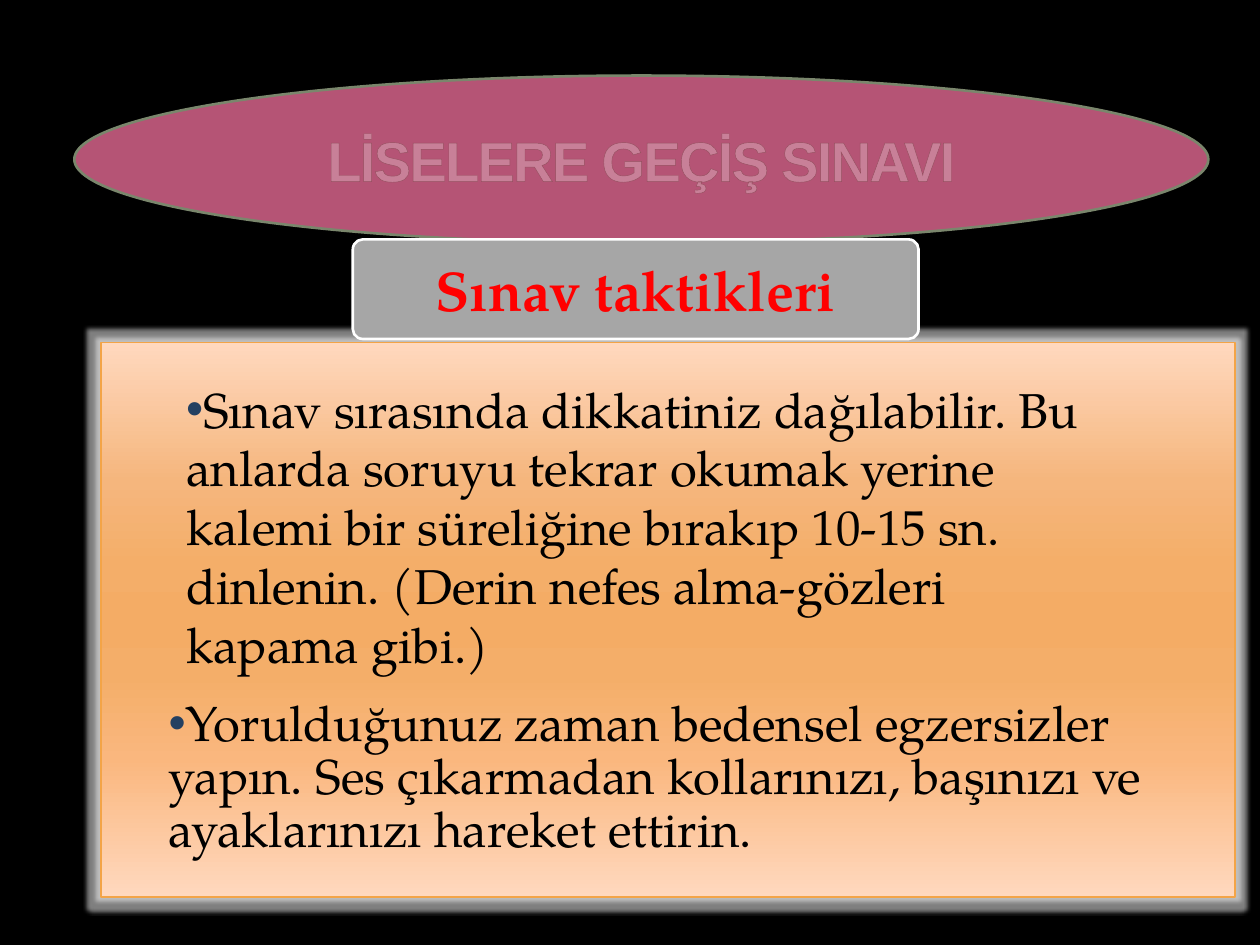
from lxml import etree
from pptx import Presentation
from pptx.dml.color import RGBColor
from pptx.enum.shapes import MSO_SHAPE
from pptx.enum.text import MSO_ANCHOR, PP_ALIGN
from pptx.oxml import parse_xml
from pptx.oxml.ns import nsdecls, qn
from pptx.util import Inches, Pt

OVAL, RECTANGLE, ROUNDED = MSO_SHAPE.OVAL, MSO_SHAPE.RECTANGLE, MSO_SHAPE.ROUNDED_RECTANGLE
MIDDLE, CENTER = MSO_ANCHOR.MIDDLE, PP_ALIGN.CENTER
SERIF = "TeX Gyre Pagella"

TITLE = "LİSELERE GEÇİŞ SINAVI"
SUBTITLE = "Sınav taktikleri"
TIPS = [
    ("Sınav sırasında dikkatiniz dağılabilir. Bu anlarda soruyu tekrar okumak yerine "
     "kalemi bir süreliğine bırakıp 10-15 sn. dinlenin. (Derin nefes alma-gözleri kapama gibi.)",
     (1.38, 2.96, 7.56, 2.93), 1.0),
    ("Yorulduğunuz zaman bedensel egzersizler yapın. Ses çıkarmadan kollarınızı, "
     "başınızı ve ayaklarınızı hareket ettirin.",
     (1.24, 5.5, 8.11, 1.4), 0.9),
]
PANEL_STOPS = [(0, "FFD8BE"), (25, "F5B67D"), (40, "F4AE69"), (50, "F4AC65"),
               (60, "F4AE69"), (75, "FAB77E"), (100, "FFD8BE")]


def color(value):
    return RGBColor.from_string(value)


def add_block(slide, kind, box, line, width, fill=None):
    shape = slide.shapes.add_shape(kind, *map(Inches, box))
    shape.shadow.inherit = False
    if fill:
        shape.fill.solid()
        shape.fill.fore_color.rgb = color(fill)
    shape.line.color.rgb = color(line)
    shape.line.width = Pt(width)
    return shape


def style(paragraph, text, size, font, text_color, bold=False):
    paragraph.text = text
    paragraph.font.size = Pt(size)
    paragraph.font.name = font
    paragraph.font.bold = bold
    paragraph.font.color.rgb = color(text_color)


def add_heading(shape, text, font, text_color):
    shape.text_frame.word_wrap = True
    shape.text_frame.vertical_anchor = MIDDLE
    paragraph = shape.text_frame.paragraphs[0]
    paragraph.alignment = CENTER
    style(paragraph, text, 32, font, text_color, True)
    return paragraph


def outline_text(paragraph):
    run = paragraph.runs[0]
    run.font.color.rgb = color("FFFFFF")
    properties = run.font._element
    properties.set("spc", "-100")
    properties.insert(0, parse_xml(
        f'<a:ln {nsdecls("a")} w="3175"><a:solidFill><a:srgbClr val="3C4422">'
        '<a:alpha val="25000"/></a:srgbClr></a:solidFill><a:prstDash val="solid"/></a:ln>'))


def add_gradient_and_glow(shape, stops):
    properties = shape._element.spPr
    stop_xml = "".join(f'<a:gs pos="{position * 1000}"><a:srgbClr val="{value}"/></a:gs>'
                       for position, value in stops)
    properties.find(qn("a:prstGeom")).addnext(parse_xml(
        f'<a:gradFill {nsdecls("a")} rotWithShape="1"><a:gsLst>{stop_xml}</a:gsLst>'
        '<a:lin ang="5400000" scaled="0"/></a:gradFill>'))
    properties.find(qn("a:effectLst")).append(parse_xml(
        f'<a:glow {nsdecls("a")} rad="63500"><a:srgbClr val="FFFFFF">'
        '<a:alpha val="50000"/></a:srgbClr></a:glow>'))


def add_tip(slide, text, box, spacing):
    frame = slide.shapes.add_textbox(*map(Inches, box)).text_frame
    frame.word_wrap = True
    paragraph = frame.paragraphs[0]
    paragraph.line_spacing = spacing
    properties = paragraph._p.get_or_add_pPr()
    bullet_color = etree.SubElement(properties, qn("a:buClr"))
    etree.SubElement(bullet_color, qn("a:srgbClr"), val="244061")
    etree.SubElement(properties, qn("a:buFont"), typeface="Arial")
    etree.SubElement(properties, qn("a:buChar"), char="•")
    style(paragraph, text, 28, SERIF, "000000")


def main():
    presentation = Presentation()
    presentation.slide_width, presentation.slide_height = Inches(10), Inches(7.5)
    slide = presentation.slides.add_slide(presentation.slide_layouts[6])
    slide.background.fill.solid()
    slide.background.fill.fore_color.rgb = color("000000")

    title = add_block(slide, OVAL, (0.59, 0.6, 9, 1.33), "7A866C", 1.5, "B55475")
    outline_text(add_heading(title, TITLE, "Arial", "FFFFFF"))

    panel = add_block(slide, RECTANGLE, (0.8, 2.72, 9, 4.4), "F3A447", 0.94)
    add_gradient_and_glow(panel, PANEL_STOPS)

    label = add_block(slide, ROUNDED, (2.8, 1.9, 4.49, 0.79), "FFFFFF", 1.5, "A6A6A6")
    label.adjustments[0] = 0.1
    add_heading(label, SUBTITLE, SERIF, "FF0000")

    for text, box, spacing in TIPS:
        add_tip(slide, text, box, spacing)

    presentation.save("out.pptx")


if __name__ == "__main__":
    main()
